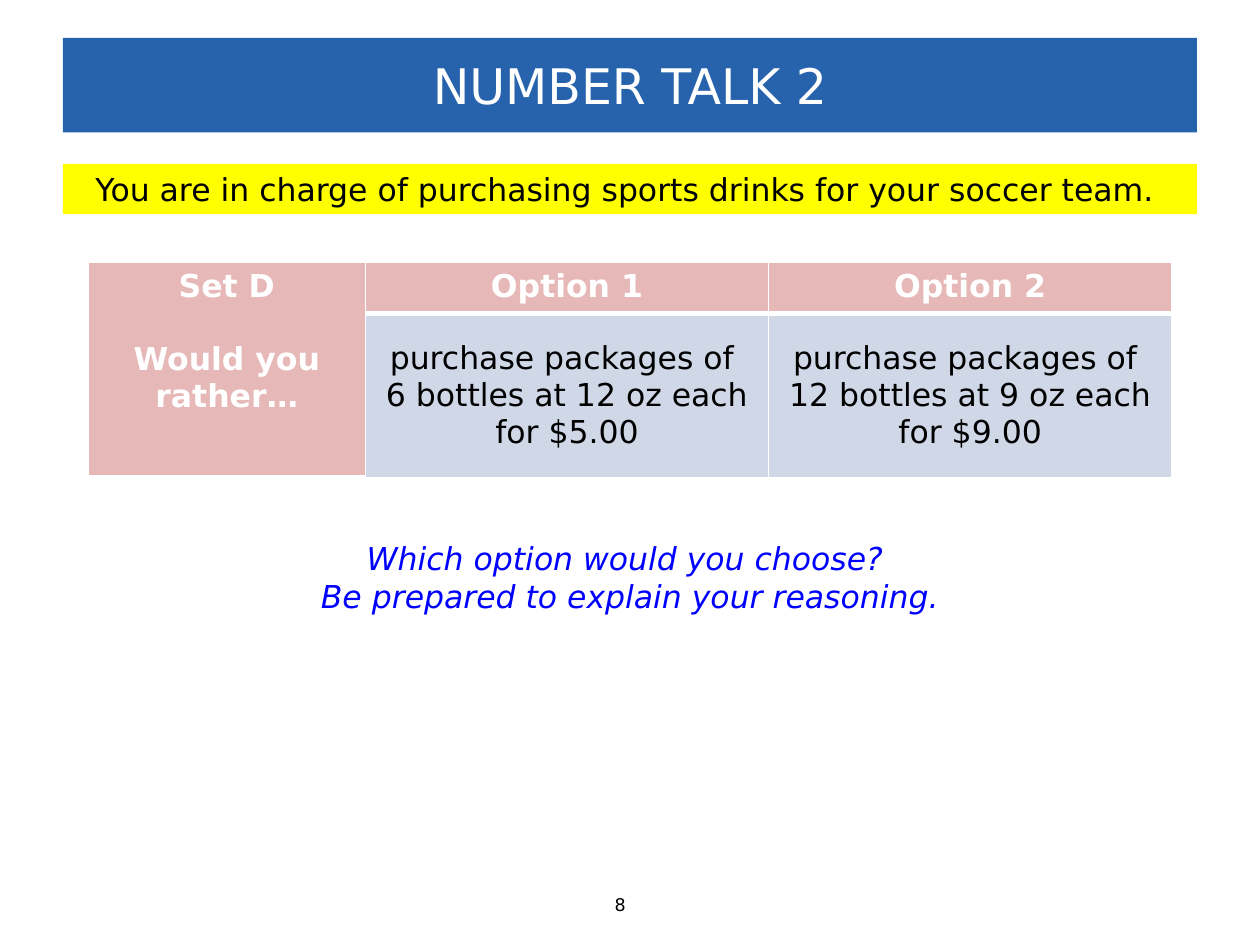
from lxml.etree import SubElement
from pptx import Presentation
from pptx.dml.color import RGBColor
from pptx.enum.shapes import MSO_SHAPE
from pptx.enum.text import MSO_ANCHOR, PP_ALIGN
from pptx.oxml.ns import qn
from pptx.util import Inches, Pt

FONT = "DejaVu Sans"
HUES = {"white": "FFFFFF", "black": "000000", "navy": "2762AD", "yellow": "FFFF00",
        "pink": "E6B9B8", "mist": "D0D8E8", "blue": "0000FF"}
COLS = 100  # the slide is a grid of 100 columns by 75 rows
UNIT = Inches(10) // COLS


def grid(*cells):
    return [round(n * UNIT) for n in cells]


def hue(name):
    return RGBColor.from_string(HUES[name])


def write(frame, *lines, size=18, color="black", bold=False, italic=False,
          align=PP_ALIGN.CENTER, gap=0):
    """Fill a text frame, one paragraph a line, with gap points between."""
    for i, line in enumerate(lines):
        para = frame.paragraphs[0] if i == 0 else frame.add_paragraph()
        para.alignment = align
        if i and gap:
            para.space_before = Pt(gap)
        run = para.add_run()
        run.text = line
        font = run.font
        font.name, font.size, font.bold, font.italic = FONT, Pt(size), bold, italic
        font.color.rgb = hue(color)


def banner(slide, box, text, fill, anchor=MSO_ANCHOR.TOP, **style):
    bar = slide.shapes.add_shape(MSO_SHAPE.RECTANGLE, *grid(*box))
    bar.shadow.inherit = False
    bar.fill.solid()
    bar.fill.fore_color.rgb = hue(fill)
    bar.line.fill.background()
    bar.text_frame.word_wrap = True
    bar.text_frame.vertical_anchor = anchor
    write(bar.text_frame, text, **style)


def note(slide, box, *lines, wrap=True, **style):
    frame = slide.shapes.add_textbox(*grid(*box)).text_frame
    frame.word_wrap = wrap
    write(frame, *lines, **style)


def edge(cell, low=1):
    """Draw white borders; low is the width of the bottom one."""
    props = cell._tc.get_or_add_tcPr()
    for i, (tag, width) in enumerate((("lnL", 1), ("lnR", 1), ("lnT", 1), ("lnB", low))):
        line = props.makeelement(qn("a:" + tag), {"w": str(Pt(width))})
        fill = SubElement(line, qn("a:solidFill"))
        SubElement(fill, qn("a:srgbClr"), val=HUES["white"])
        props.insert(i, line)


def paint(cell, fill, low=1):
    cell.fill.solid()
    cell.fill.fore_color.rgb = hue(fill)
    edge(cell, low)


def choices(slide, box, label, options):
    """Label cell at the left, then one column for each option."""
    wide, high = box[2:]
    first, head = 22, 4.1
    table = slide.shapes.add_table(2, len(options) + 1, *grid(*box)).table
    table.first_row = table.horz_banding = False
    each = (wide - first) / len(options)
    for col, size in zip(table.columns, grid(first, *[each] * len(options))):
        col.width = size
    for row, size in zip(table.rows, grid(head, high - head)):
        row.height = size

    # Label over both rows
    side = table.cell(0, 0)
    side.merge(table.cell(1, 0))
    write(side.text_frame, *label, color="white", bold=True, gap=21)
    for i in range(2):
        paint(table.cell(i, 0), "pink", low=3)

    # Options
    for i, lines in enumerate(options, 1):
        top, body = table.cell(0, i), table.cell(1, i)
        write(top.text_frame, f"Option {i}", color="white", bold=True)
        paint(top, "pink", low=3)
        body.vertical_anchor = MSO_ANCHOR.MIDDLE
        write(body.text_frame, *lines)
        paint(body, "mist")
        # The shared edge is as thick as the heading's lower border
        body._tc.tcPr.find(qn("a:lnT")).set("w", str(Pt(3)))


def main():
    deck = Presentation()
    deck.slide_width, deck.slide_height = grid(COLS, 75)
    slide = deck.slides.add_slide(deck.slide_layouts[6])

    # Page number
    note(slide, (47.8, 70.5, 4.4, 2.7), "8", wrap=False, size=10, align=PP_ALIGN.LEFT)
    # Title
    banner(slide, (5, 3, 90, 7.5), "NUMBER TALK 2", "navy",
           anchor=MSO_ANCHOR.MIDDLE, size=28, color="white")
    # Question
    note(slide, (24.4, 42.3, 51.2, 7.1), "Which option would you choose? ",
         "Be prepared to explain your reasoning.", color="blue", italic=True)
    # Choices
    choices(slide, (7, 20.8, 86, 17.1), ("Set D", "Would you rather…"), (
        ("purchase packages of ", "6 bottles at 12 oz each for $5.00"),
        ("purchase packages of ", "12 bottles at 9 oz each for $9.00")))
    # Setting
    banner(slide, (5, 13, 90, 4),
           "You are in charge of purchasing sports drinks for your soccer team. ", "yellow")
    deck.save("out.pptx")


if __name__ == "__main__":
    main()
